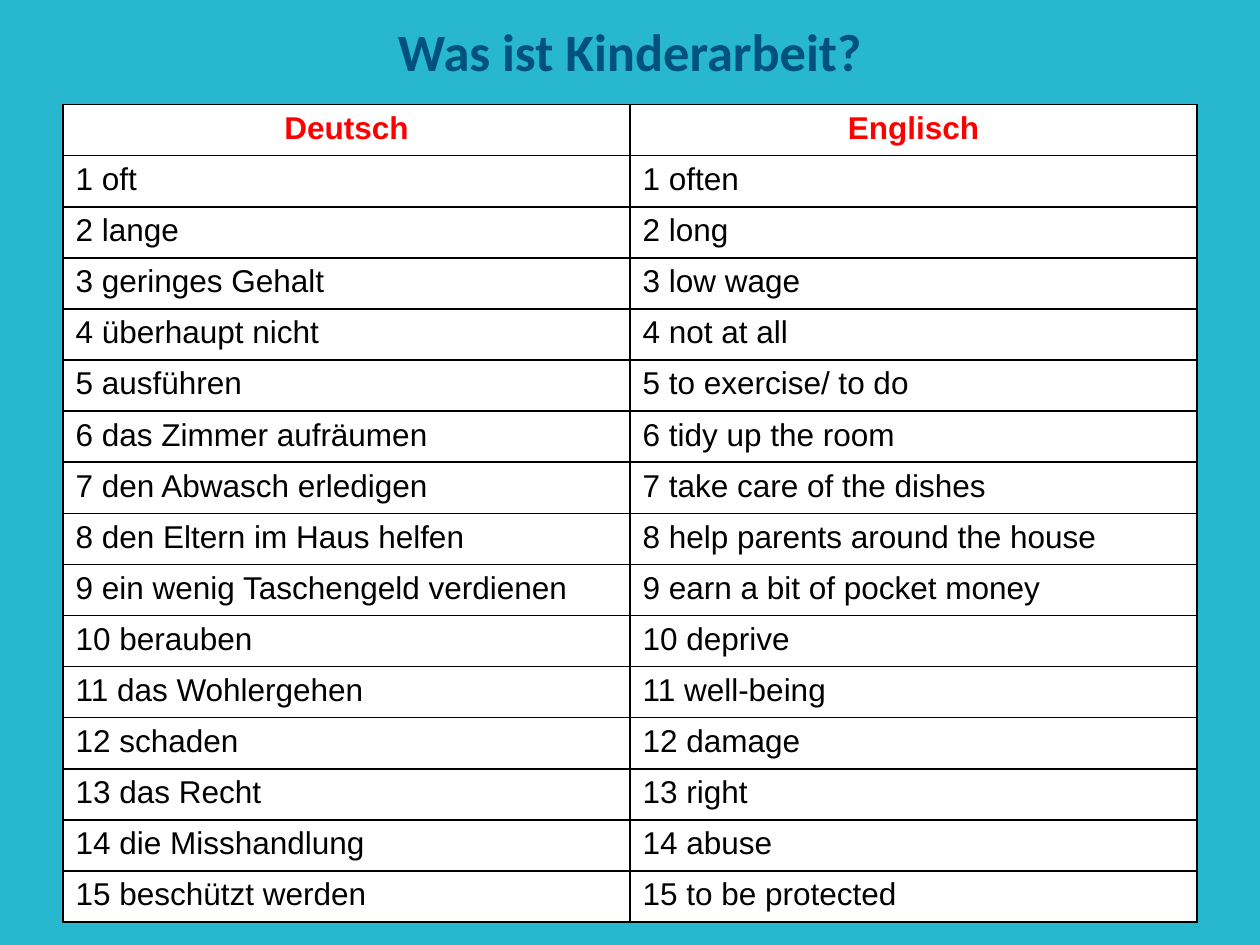
from lxml.etree import SubElement
from pptx import Presentation
from pptx.dml.color import RGBColor
from pptx.enum.text import MSO_ANCHOR, MSO_AUTO_SIZE, PP_ALIGN
from pptx.oxml.ns import qn
from pptx.util import Inches, Pt

VOCABULARY = [
    ("oft", "often"),
    ("lange", "long"),
    ("geringes Gehalt", "low wage"),
    ("überhaupt nicht", "not at all"),
    ("ausführen", "to exercise/ to do"),
    ("das Zimmer aufräumen", "tidy up the room"),
    ("den Abwasch erledigen", "take care of the dishes"),
    ("den Eltern im Haus helfen", "help parents around the house"),
    ("ein wenig Taschengeld verdienen", "earn a bit of pocket money"),
    ("berauben", "deprive"),
    ("das Wohlergehen", "well-being"),
    ("schaden", "damage"),
    ("das Recht", "right"),
    ("die Misshandlung", "abuse"),
    ("beschützt werden", "to be protected"),
]


def color(hex_string):
    return RGBColor.from_string(hex_string)


def write_text(frame, text, *, font, size, ink, bold=False, align=PP_ALIGN.LEFT):
    paragraph = frame.paragraphs[0]
    paragraph.alignment = align
    run = paragraph.add_run()
    run.text = text
    run.font.name = font
    run.font.size = Pt(size)
    run.font.bold = bold
    run.font.color.rgb = color(ink)


def set_borders(cell, ink, width):
    """Draw all four edges; the schema wants them ahead of the cell fill."""
    properties = cell._tc.get_or_add_tcPr()
    for position, edge in enumerate(("a:lnL", "a:lnR", "a:lnT", "a:lnB")):
        line = SubElement(properties, qn(edge), w=str(Pt(width)))
        fill = SubElement(line, qn("a:solidFill"))
        SubElement(fill, qn("a:srgbClr"), val=ink)
        properties.insert(position, line)


class VocabularySlide:
    background = "27B8CF"
    title_style = dict(font="Calibri", size=30, ink="00527D", bold=True,
                       align=PP_ALIGN.CENTER)
    header_style = dict(font="Arial", size=18, ink="FF0000", bold=True,
                        align=PP_ALIGN.CENTER)
    body_style = dict(font="Arial", size=18, ink="000000")
    cell_fill = "FFFFFF"
    border = dict(ink="000000", width=1)

    def __init__(self, presentation):
        title_only = presentation.slide_layouts[5]
        self.slide = presentation.slides.add_slide(title_only)
        fill = self.slide.background.fill
        fill.solid()
        fill.fore_color.rgb = color(self.background)

    def add_title(self, text, left, top, width, height):
        title = self.slide.shapes.title
        title.left, title.top = Inches(left), Inches(top)
        title.width, title.height = Inches(width), Inches(height)
        frame = title.text_frame
        frame.word_wrap = True
        frame.auto_size = MSO_AUTO_SIZE.SHAPE_TO_FIT_TEXT
        frame.vertical_anchor = MSO_ANCHOR.TOP
        write_text(frame, text, **self.title_style)

    def add_table(self, rows, left, top, width, height):
        """Add a table whose first row is the header; the rows share the height."""
        table = self.slide.shapes.add_table(
            len(rows), len(rows[0]),
            Inches(left), Inches(top), Inches(width), Inches(height)).table
        table.horz_banding = False
        for row_index, row in enumerate(rows):
            style = self.body_style if row_index else self.header_style
            for column_index, text in enumerate(row):
                cell = table.cell(row_index, column_index)
                cell.fill.solid()
                cell.fill.fore_color.rgb = color(self.cell_fill)
                set_borders(cell, **self.border)
                write_text(cell.text_frame, text, **style)


def main():
    presentation = Presentation()
    presentation.slide_width = Inches(10)
    presentation.slide_height = Inches(7.5)

    rows = [("Deutsch", "Englisch")]
    for number, words in enumerate(VOCABULARY, start=1):
        rows.append([f"{number} {word}" for word in words])

    page = VocabularySlide(presentation)
    page.add_title("Was ist Kinderarbeit?", 0.5, 0.1, 9, 0.61)
    page.add_table(rows, 0.5, 0.83, 9, 6.49)
    presentation.save("out.pptx")


if __name__ == "__main__":
    main()
